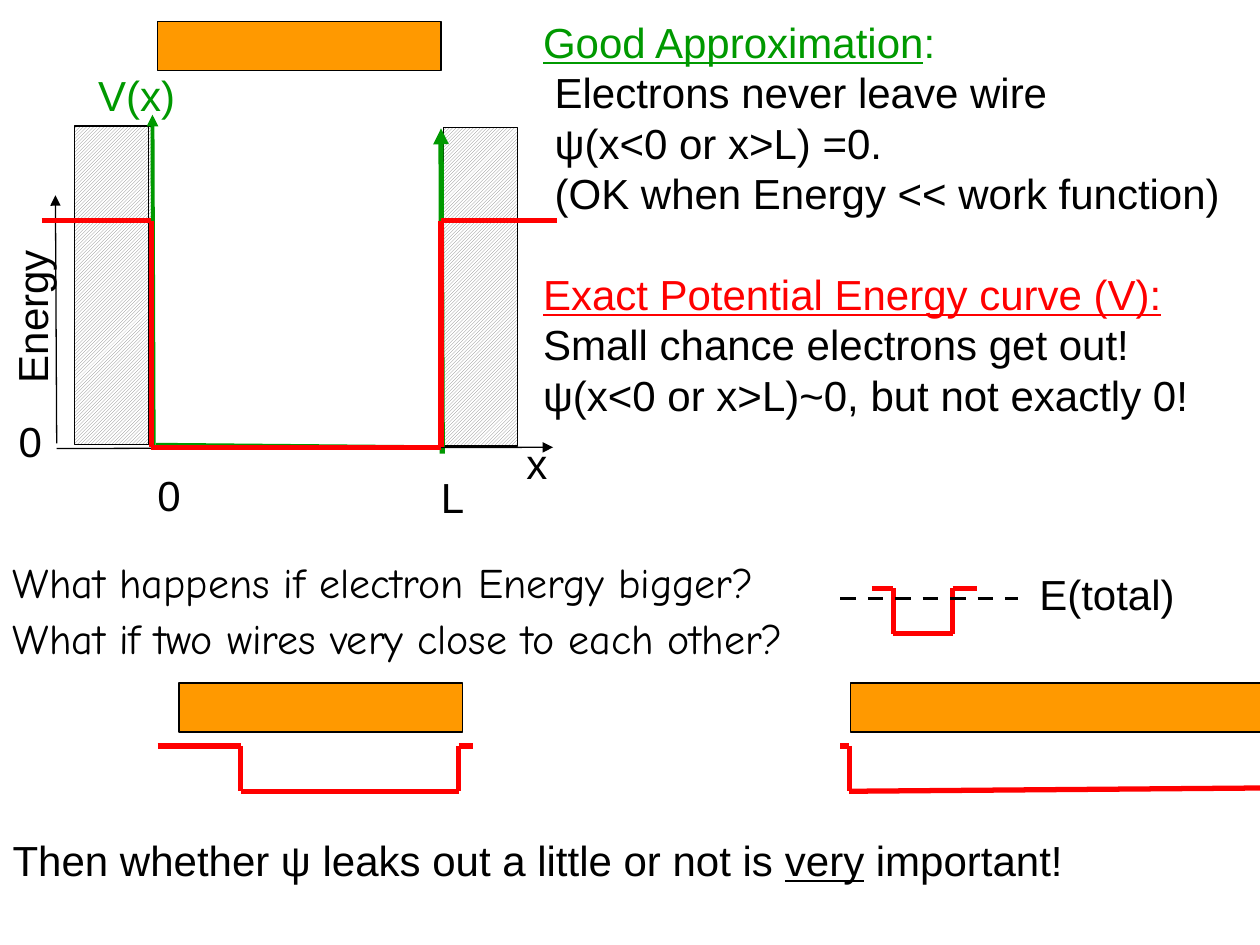
from lxml import etree
from pptx import Presentation
from pptx.dml.color import RGBColor
from pptx.enum.dml import MSO_LINE, MSO_PATTERN
from pptx.enum.shapes import MSO_CONNECTOR, MSO_SHAPE
from pptx.enum.text import MSO_ANCHOR, MSO_AUTO_SIZE
from pptx.oxml.ns import qn
from pptx.util import Inches, Pt

SLIDE_W, SLIDE_H = Inches(10), Inches(7.5)
COL, ROW = SLIDE_W / 100, SLIDE_H / 75

BLACK = RGBColor(0, 0, 0)
WHITE = RGBColor(255, 255, 255)
GRAY = RGBColor(128, 128, 128)
GREEN = RGBColor(0, 153, 0)
RED = RGBColor(255, 0, 0)
ORANGE = RGBColor(255, 153, 0)

RECT = MSO_SHAPE.RECTANGLE
STRAIGHT = MSO_CONNECTOR.STRAIGHT
HATCH = MSO_PATTERN.DARK_UPWARD_DIAGONAL
DASH = MSO_LINE.DASH
TOP = MSO_ANCHOR.TOP
NO_FIT = MSO_AUTO_SIZE.NONE
SANS, COMIC = "Arial", "Comic Neue"
SIZE = Pt(24)
LINE_HEIGHT = 28.8


def grid(x, y):
    return round(x * COL), round(y * ROW)


def add_line(shapes, start, end, color, width, arrow=False):
    c = shapes.add_connector(STRAIGHT, *grid(*start), *grid(*end))
    c.line.color.rgb = color
    c.line.width = Pt(width)
    sp_pr = c._element.spPr
    if arrow:
        etree.SubElement(sp_pr.find(qn("a:ln")), qn("a:tailEnd"), type="triangle")
    etree.SubElement(sp_pr, qn("a:effectLst"))
    return c


def add_rect(s, x, y, w, h):
    sp = s.shapes.add_shape(RECT, *grid(x, y), *grid(w, h))
    sp.shadow.inherit = False
    sp.line.color.rgb = BLACK
    sp.line.width = Pt(0.75)
    return sp


def add_wire(s, x, y, w):
    sp = add_rect(s, x, y, w, 3.9)
    sp.fill.solid()
    sp.fill.fore_color.rgb = ORANGE


def add_label(s, text, x, y, w, color=BLACK, rotation=0):
    sp = s.shapes.add_textbox(*grid(x, y), *grid(w, 5))
    sp.rotation = rotation
    tf = sp.text_frame
    tf.word_wrap = False
    p = tf.paragraphs[0]
    p.text = text
    p.font.size, p.font.name = SIZE, SANS
    p.font.color.rgb = color


def add_well(s, x, y, w, h, left, right=None, rise=0):
    shapes = s.shapes.add_group_shape().shapes
    end = w if right is None else right
    segments = [((0, 0), (left, 0)), ((left, 0), (left, h)),
                ((left, h), (end, h - rise))]
    if right is not None:
        segments += [((right, 0), (right, h)), ((right, 0), (w, 0))]
    for (x1, y1), (x2, y2) in segments:
        add_line(shapes, (x + x1, y + y1), (x + x2, y + y2), RED, 3)


def fill_body(sp, x, y, w, h, paragraphs):
    sp.left, sp.top = grid(x, y)
    sp.width, sp.height = grid(w, h)
    tf = sp.text_frame
    tf.word_wrap, tf.auto_size, tf.vertical_anchor = True, NO_FIT, TOP
    for i, (runs, color, font, spacing, gap) in enumerate(paragraphs):
        p = tf.add_paragraph() if i else tf.paragraphs[0]
        p_pr = p._p.get_or_add_pPr()
        p_pr.set("marL", "0")
        p_pr.set("indent", "0")
        p.line_spacing, p.space_before = spacing, Pt(gap)
        etree.SubElement(p_pr, qn("a:buNone"))
        p.font.size, p.font.name, p.font.color.rgb = SIZE, font, color
        for text, underlined in runs:
            r = p.add_run()
            r.text = text
            if underlined:
                r.font.underline = True


def explanation(sp, x, y, w, h):
    rows = [
        ([("Good Approximation", True), (":", False)], GREEN, 0),
        ([(" Electrons never leave wire", False)], BLACK, 0),
        ([(" ψ(x<0 or x>L) =0.", False)], BLACK, 0),
        ([(" (OK when Energy << work function)", False)], BLACK, 0),
        ([("Exact Potential Energy curve (V):", True)], RED, LINE_HEIGHT),
        ([("Small chance electrons get out!", False)], BLACK, 0),
        ([("ψ(x<0 or x>L)~0, but not exactly 0!", False)], BLACK, 0),
    ]
    fill_body(sp, x, y, w, h,
              [(runs, color, SANS, 1.0, gap) for runs, color, gap in rows])


def questions(sp, x, y, w, h):
    fill_body(sp, x, y, w, h, [
        ([("What happens if electron Energy bigger?", False)], BLACK, COMIC, 1.0, 0),
        ([("What if two wires very close to each other?", False)], BLACK, COMIC, 1.1, 0),
        ([("Then whether ψ leaks out a little or not is ", False), ("very", True),
          (" important!", False)], BLACK, SANS, 1.1, 3 * 1.1 * LINE_HEIGHT),
    ])


def energy_diagram(s, x, y, w, h):
    floor = y + h
    for dx, dy in ((30.7, 0.1), (1.6, 0), (1.4, 0)):
        sp = add_rect(s, x + dx, y + dy, 5.9, 25.3)
        sp.fill.patterned()
        sp.fill.pattern = HATCH
        sp.fill.fore_color.rgb, sp.fill.back_color.rgb = GRAY, WHITE
    add_wire(s, x + 8, y - 8.3, 22.5)
    add_line(s.shapes, (x + 7.7, floor), (x + 7.6, y - 0.9), GREEN, 2.25, True)
    add_line(s.shapes, (x + 30.6, floor + 0.5), (x + 30.5, y + 0.2), GREEN, 3, True)
    add_line(s.shapes, (x + 7.9, floor - 0.2), (x + 30.6, floor), GREEN, 2.25)
    add_line(s.shapes, (x, floor - 0.3), (x - 0.1, y + 5.5), BLACK, 0.75, True)
    add_line(s.shapes, (x, floor + 0.1), (x + w, floor), BLACK, 0.75, True)
    add_label(s, "0", x - 4, floor - 3, 4.8)
    add_label(s, "Energy", x - 8.3, y + 12.6, 12.6, rotation=270)
    add_label(s, "x", x + 36.3, floor - 1.3, 3.7)
    add_label(s, "0", x + 7, floor + 1.3, 3.9)
    add_label(s, "L", x + 29.5, floor + 1.4, 3.9)
    add_label(s, "V(x)", x + 2.3, y - 5, 8.1, GREEN)
    add_well(s, x - 1.2, y + 7.5, 40.9, h - 7.5, 8.7, 31.7)


def total_energy(s, x, y, w):
    add_well(s, x + 2.5, y - 0.8, 8.3, 3.6, 1.7, 6.4)
    level = add_line(s.shapes, (x, y), (x + w, y), BLACK, 2.25)
    level.line.dash_style = DASH
    add_label(s, "E(total)", x + w + 0.7, y - 2.9, 12.9)


def close_wires(s, y):
    add_wire(s, 14.2, y, 22.5)
    add_wire(s, 67.5, y, 53.3)
    add_well(s, 12.5, y + 5, 25, 3.6, 6.6, 23.9)
    add_well(s, 66.7, y + 5, 38.3, 3.6, 0.7, rise=0.3)


def main():
    prs = Presentation()
    prs.slide_width, prs.slide_height = SLIDE_W, SLIDE_H
    s = prs.slides.add_slide(prs.slide_layouts[3])
    title = s.shapes.title._element
    title.getparent().remove(title)
    explanation(s.placeholders[1], 42.1, 0.8, 60.6, 33.3)
    questions(s.placeholders[2], 0, 43.7, 87.5, 27.2)
    energy_diagram(s, 4.5, 10, 39.4, 25.5)
    close_wires(s, 54.2)
    total_energy(s, 66.7, 47.5, 14.1)
    prs.save("out.pptx")


if __name__ == "__main__":
    main()
